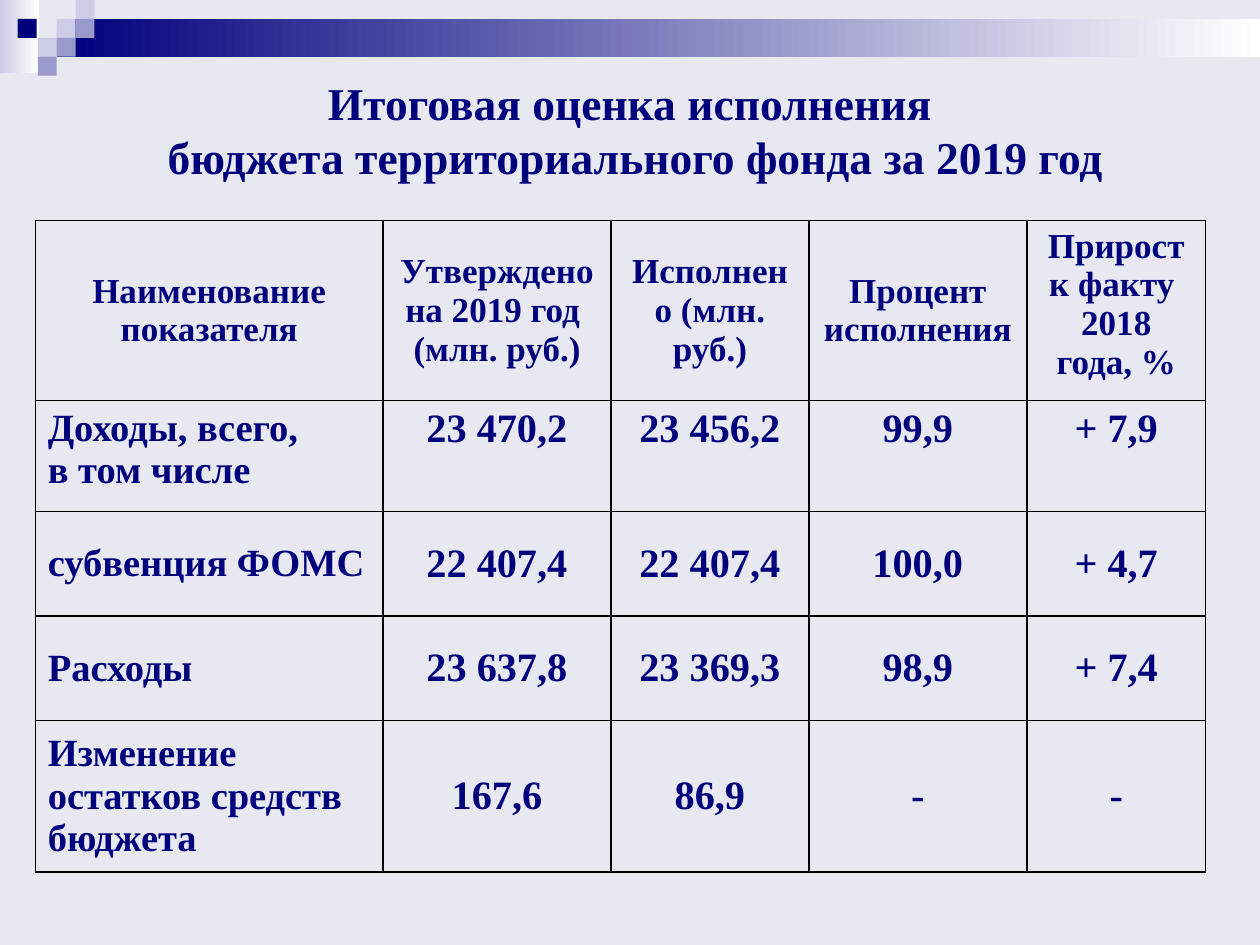
from pptx import Presentation
from pptx.dml.color import RGBColor
from pptx.enum.shapes import MSO_SHAPE
from pptx.enum.text import MSO_ANCHOR, PP_ALIGN
from pptx.oxml import parse_xml
from pptx.oxml.ns import nsdecls
from pptx.util import Inches, Pt

NAVY = RGBColor(0x00, 0x00, 0x7D)
VIOLET = RGBColor(0x99, 0x99, 0xCC)
LAVENDER = RGBColor(0xCC, 0xCC, 0xE6)
WHITE = RGBColor(0xFF, 0xFF, 0xFF)
BACKGROUND = RGBColor(0xE8, 0xE8, 0xF1)
RECTANGLE = MSO_SHAPE.RECTANGLE
CENTER, LEFT = PP_ALIGN.CENTER, PP_ALIGN.LEFT
TOP, MIDDLE = MSO_ANCHOR.TOP, MSO_ANCHOR.MIDDLE


def write_text(frame, text, size, align=CENTER, anchor=MIDDLE):
    """Fill the frame; a line feed starts a paragraph, a vertical tab a line."""
    frame.text = text
    frame.word_wrap = True
    frame.vertical_anchor = anchor
    for para in frame.paragraphs:
        para.alignment = align
        for span in para.runs:
            span.font.name = "Times New Roman"
            span.font.size = Pt(size)
            span.font.bold = True
            span.font.color.rgb = NAVY


def add_block(left, top, width, height, color, end_color=None):
    """Add a borderless rectangle, shaded left to right if end_color is given."""
    block = slide.shapes.add_shape(
        RECTANGLE, Inches(left), Inches(top), Inches(width), Inches(height))
    block.shadow.inherit = False
    block.line.fill.background()
    if end_color is None:
        block.fill.solid()
        block.fill.fore_color.rgb = color
    else:
        block.fill.gradient()
        block.fill.gradient_angle = 0
        for stop, position, shade in zip(
                block.fill.gradient_stops, (0, 1), (color, end_color)):
            stop.position = position
            stop.color.rgb = shade


deck = Presentation()
deck.slide_width, deck.slide_height = Inches(10), Inches(7.5)
slide = deck.slides.add_slide(deck.slide_layouts[5])
slide.background.fill.solid()
slide.background.fill.fore_color.rgb = BACKGROUND

# Header band with its mosaic of small squares
add_block(0, 0, 0.31, 0.58, LAVENDER, WHITE)
add_block(0.45, 0.15, 9.55, 0.3, NAVY, WHITE)
SQUARE = 0.15
for left, top, color in [
    (0.45, 0.15, LAVENDER), (0.6, 0, LAVENDER), (0.6, 0.15, VIOLET),
    (0.3, 0.3, LAVENDER), (0.14, 0.15, NAVY), (0.45, 0.3, VIOLET),
    (0.3, 0.45, VIOLET),
]:
    add_block(left, top, SQUARE, SQUARE, color)

title = slide.shapes.title
title.left, title.top = Inches(0.83), Inches(0.5)
title.width, title.height = Inches(8.43), Inches(1.05)
write_text(title.text_frame,
           "Итоговая оценка исполнения \vбюджета территориального фонда за 2019 год", 26)

# Budget table
COLUMN_WIDTHS = [2.76, 1.81, 1.57, 1.73, 1.42]
ROW_HEIGHTS = [1.43, 0.88, 0.83, 0.83, 1.2]
BUDGET = [
    ["Наименование показателя", "Утверждено на 2019 год \n(млн. руб.)",
     "Исполнено (млн. руб.)", "Процент исполнения", "Прирост к факту \n2018 года, %"],
    ["Доходы, всего, \nв том числе", "23 470,2", "23 456,2", "99,9", "+ 7,9"],
    ["субвенция ФОМС", "22 407,4", "22 407,4", "100,0", "+ 4,7"],
    ["Расходы", "23 637,8", "23 369,3", "98,9", "+ 7,4"],
    ["Изменение остатков средств бюджета", "167,6", "86,9", "-", "-"],
]
table = slide.shapes.add_table(
    len(ROW_HEIGHTS), len(COLUMN_WIDTHS), Inches(0.28), Inches(1.75),
    Inches(sum(COLUMN_WIDTHS)), Inches(sum(ROW_HEIGHTS))).table
table.first_row = table.horz_banding = False
for column, width in zip(table.columns, COLUMN_WIDTHS):
    column.width = Inches(width)
for row, height in zip(table.rows, ROW_HEIGHTS):
    row.height = Inches(height)

for r, values in enumerate(BUDGET):
    for c, value in enumerate(values):
        cell = table.cell(r, c)
        size = 20 if r == 0 else 22 if c == 0 else 23
        align = LEFT if r > 0 and c == 0 else CENTER
        write_text(cell.text_frame, value, size, align)
        cell.vertical_anchor = TOP if r == 1 or (r, c) == (0, 4) else MIDDLE
        properties = cell._tc.get_or_add_tcPr()
        for side in ("lnL", "lnR", "lnT", "lnB"):
            properties.append(parse_xml(
                f'<a:{side} {nsdecls("a")} w="12700"><a:solidFill>'
                f'<a:srgbClr val="000000"/></a:solidFill></a:{side}>'))
        cell.fill.background()

        # The text frame's own anchor does not apply inside a cell
        body = cell.text_frame._txBody.bodyPr
        body.attrib.clear()

deck.save("out.pptx")
